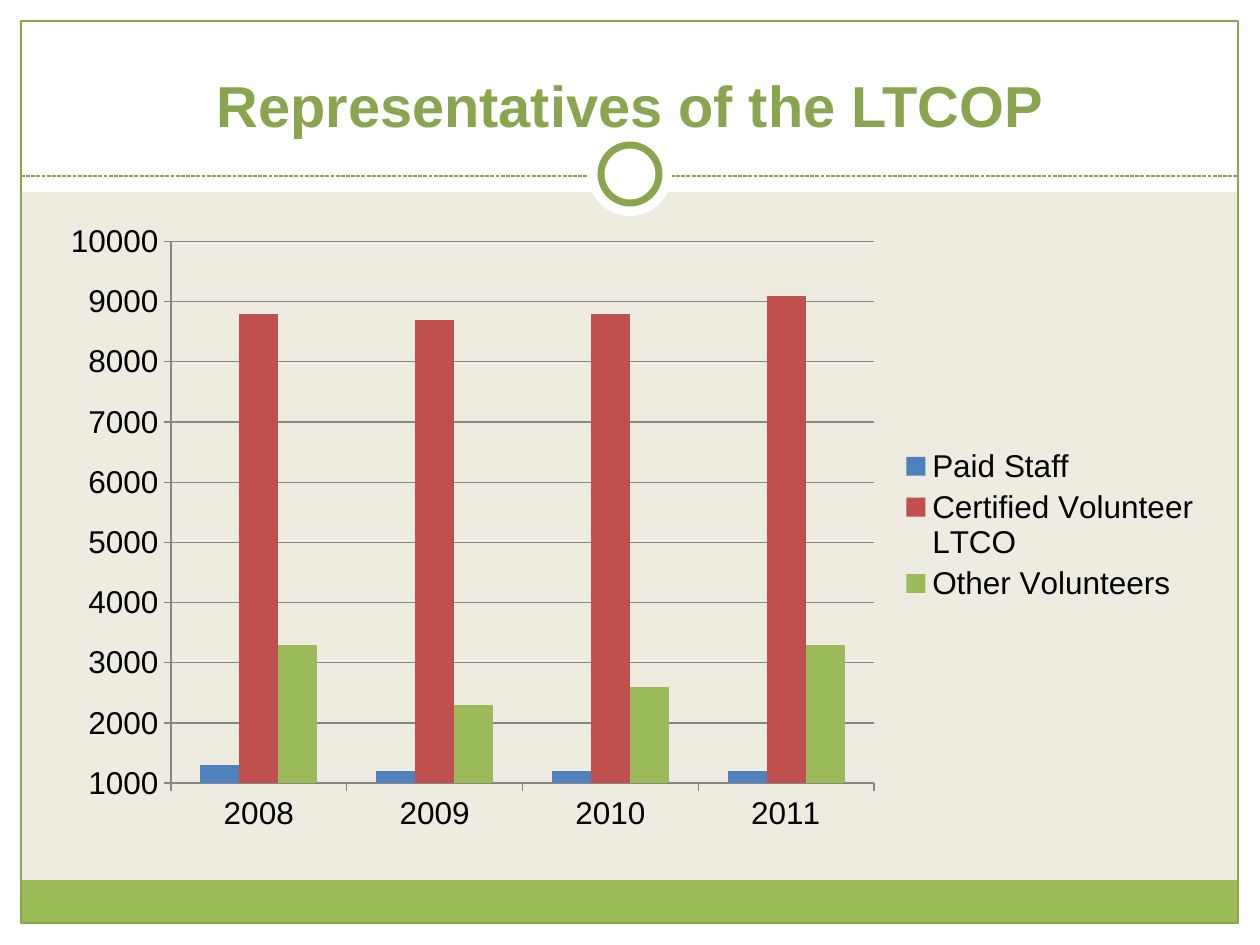
from lxml.etree import SubElement as Sub
from pptx import Presentation
from pptx.chart.data import CategoryChartData as Data
from pptx.dml.color import RGBColor as RGB
from pptx.enum.chart import XL_CHART_TYPE as Kind, XL_LEGEND_POSITION as Side, XL_TICK_MARK as Tick
from pptx.enum.dml import MSO_LINE as Dash
from pptx.enum.shapes import MSO_CONNECTOR as Conn, MSO_SHAPE as Form
from pptx.enum.text import MSO_ANCHOR as Anchor, PP_ALIGN as Align
from pptx.oxml.ns import qn
from pptx.util import Emu, Pt

PX = 914400 / 126
HUE = {
    "sand": "EEECE1", "white": "FFFFFF", "olive": "89A54F", "black": "000000",
    "grey": "868686", "blue": "4F81BD", "red": "C0504D", "green": "9BBB59",
}


def tint(name):
    return RGB.from_string(HUE[name])


def write(frame, text, font="Arial", size=18, color="black", bold=False, align=Align.LEFT):
    frame.text = text
    para = frame.paragraphs[0]
    para.alignment = align
    face = para.runs[0].font
    face.name, face.size, face.bold = font, Pt(size), bold
    face.color.rgb = tint(color)


deck = Presentation()
deck.slide_width, deck.slide_height = Emu(round(1260 * PX)), Emu(round(945 * PX))
slide = deck.slides.add_slide(deck.slide_layouts[5])
slide.background.fill.solid()
slide.background.fill.fore_color.rgb = tint("sand")
tree = slide.shapes

parts = [
    (Form.RECTANGLE, (0, 924, 1260, 21), "white", None, 0),
    (Form.RECTANGLE, (0, 0, 1260, 192), "white", None, 0),
    (Form.RECTANGLE, (0, 0, 21, 945), "white", None, 0),
    (Form.RECTANGLE, (1239, 0, 21, 945), "white", None, 0),
    (Form.RECTANGLE, (21, 880, 1217, 43), "green", None, 0),
    (Form.RECTANGLE, (21, 21, 1217, 902), None, "olive", 0.75),
    (Form.OVAL, (588, 132, 84, 84), "white", None, 0),
    (Form.OVAL, (601, 145, 58, 58), "white", "olive", 4),
]
for form, box, fill, line, width in parts:
    if form == Form.OVAL and line is None:
        rule = tree.add_connector(Conn.STRAIGHT, *[Emu(round(n * PX)) for n in (21, 176, 1239, 176)])
        rule.line.color.rgb = tint("olive")
        rule.line.width = Pt(0.75)
        rule.line.dash_style = Dash.SQUARE_DOT
        Sub(rule._element.spPr, qn("a:effectLst"))
    shape = tree.add_shape(form, *[Emu(round(n * PX)) for n in box])
    shape.shadow.inherit = False
    if fill:
        shape.fill.solid()
        shape.fill.fore_color.rgb = tint(fill)
    else:
        shape.fill.background()
    if line:
        shape.line.color.rgb = tint(line)
        shape.line.width = Pt(width)
    else:
        shape.line.fill.background()

title = tree.title
title.left, title.top, title.width, title.height = [Emu(round(n * PX)) for n in (25, 32, 1210, 113)]
title.text_frame.vertical_anchor = Anchor.BOTTOM
write(title.text_frame, "Representatives of the LTCOP", size=33, color="olive", bold=True, align=Align.CENTER)
tree._spTree.append(title._element)

data = Data()
data.categories = ["2008", "2009", "2010", "2011"]
data.add_series("Paid Staff", [1300, 1200, 1200, 1200])
data.add_series("Certified Volunteer LTCO", [8800, 8700, 8800, 9100])
data.add_series("Other Volunteers", [3300, 2300, 2600, 3300])
box = [Emu(round(n * PX)) for n in (42, 210, 1172, 630)]
chart = tree.add_chart(Kind.COLUMN_CLUSTERED, *box, data).chart
chart.has_title = False
chart.font.name, chart.font.size = "TeX Gyre Schola", Pt(18)
chart.font.color.rgb = tint("black")

plot = chart.plots[0]
plot.gap_width, plot.overlap = 150, 0
plot.vary_by_categories = False
for series, name in zip(plot.series, ("blue", "red", "green")):
    series.format.fill.solid()
    series.format.fill.fore_color.rgb = tint(name)

cats, vals = chart.category_axis, chart.value_axis
vals.minimum_scale, vals.maximum_scale, vals.major_unit = 1000, 10000, 1000
vals.has_major_gridlines = True
vals.major_gridlines.format.line.color.rgb = tint("grey")
chart.has_legend = True
key = chart.legend
key.position, key.include_in_layout = Side.RIGHT, False
for axis in (cats, vals):
    axis.major_tick_mark = Tick.OUTSIDE
    axis.format.line.color.rgb = tint("grey")
for face in (cats.tick_labels.font, vals.tick_labels.font, key.font):
    face.name, face.size = "Arial", Pt(18)
    face.color.rgb = tint("black")

area = chart._chartSpace.chart.plotArea
for part, spots in ((area, (0.11, 0.05, 0.6, 0.86)), (key._element, (0.73, 0.37, 0.26, 0.26))):
    for old in part.findall(qn("c:layout")):
        part.remove(old)
    frame = Sub(part, qn("c:layout"))
    part.insert(0 if part is area else 1, frame)
    manual = Sub(frame, qn("c:manualLayout"))
    if part is area:
        Sub(manual, qn("c:layoutTarget"), val="inner")
    for tag in ("xMode", "yMode"):
        Sub(manual, qn("c:" + tag), val="edge")
    for tag, spot in zip("xywh", spots):
        Sub(manual, qn("c:" + tag), val=str(spot))

deck.save("out.pptx")
